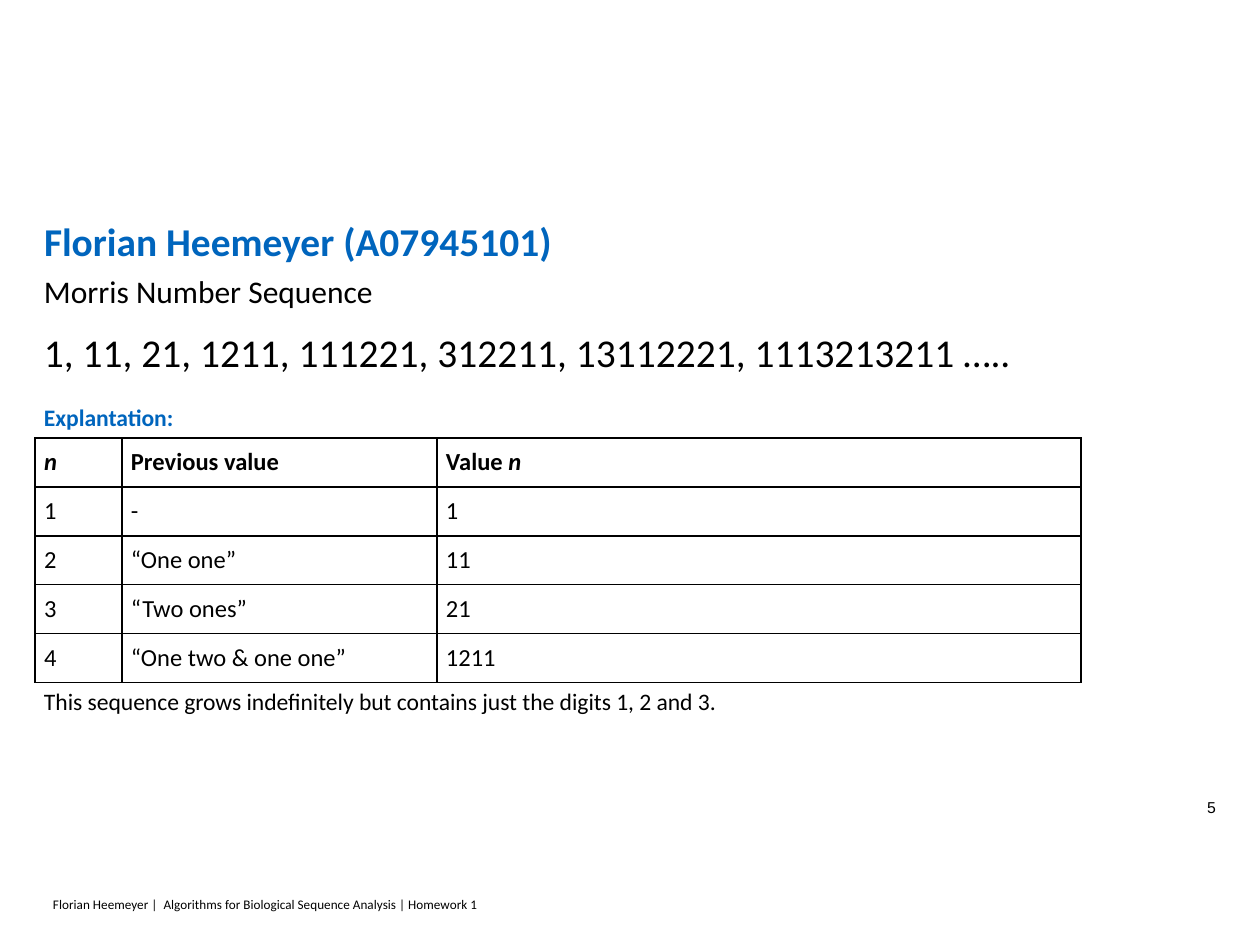
from dataclasses import dataclass

from lxml.etree import SubElement
from pptx import Presentation
from pptx.dml.color import RGBColor
from pptx.enum.text import MSO_ANCHOR, MSO_AUTO_SIZE, PP_ALIGN
from pptx.oxml.ns import qn
from pptx.util import Emu, Pt


@dataclass(frozen=True)
class Theme:
    blue: RGBColor = RGBColor(0x00, 0x65, 0xBD)
    black: RGBColor = RGBColor(0, 0, 0)
    font: str = "Calibri"
    number_font: str = "Arial"
    large: float = 22.5
    subtitle: float = 18
    table: float = 14
    body: float = 13.5
    number: float = 9
    footer: float = 7.5
    border: float = 0.75


theme = Theme()
PX = 914400 / 126
INSET = 9


def px(n):
    return Emu(round(n * PX))


def style(p, size, color=theme.black, bold=False, font=theme.font):
    for r in p.runs:
        r.font.name = font
        r.font.size = Pt(size)
        r.font.color.rgb = color
        r.font.bold = bold


prs = Presentation()
prs.slide_width, prs.slide_height = px(1260), px(945)
s = prs.slides.add_slide(prs.slide_layouts[5])

# Text: shape, box, paragraphs as (text, size, colour, bold, space before)
title = s.shapes.title
subtitle, body, footer, number = (s.shapes.add_textbox(0, 0, 0, 0) for _ in range(4))
blocks = [
    (title, (35, 208, 1182, 55),
     [("Florian Heemeyer (A07945101)", theme.large, theme.blue, True, 0)]),
    (subtitle, (35, 263, 1182, 55),
     [("Morris Number Sequence", theme.subtitle, theme.black, False, 0)]),
    (body, (35, 319, 1182, 437),
     [("1, 11, 21, 1211, 111221, 312211, 13112221, 1113213211 …..",
       theme.large, theme.black, False, 0),
      ("Explantation:", theme.body, theme.blue, True, 16),
      ("This sequence grows indefinitely but contains just the digits 1, 2 and 3.",
       theme.body, theme.black, False, 146)]),
    (footer, (44, 885, 1089, 50),
     [("Florian Heemeyer |  Algorithms for Biological Sequence Analysis | Homework 1",
       theme.footer, theme.black, False, 0)]),
    (number, (935, 788, 281, 38), [("5", theme.number, theme.black, False, 0)]),
]
for sp, box, paragraphs in blocks:
    sp.left, sp.top, sp.width, sp.height = map(px, box)
    tf = sp.text_frame
    tf.word_wrap = True
    tf.auto_size = MSO_AUTO_SIZE.NONE
    tf.vertical_anchor = MSO_ANCHOR.TOP
    tf.margin_left = tf.margin_right = tf.margin_top = tf.margin_bottom = px(INSET)
    tf.text = "\n".join(text for text, *_ in paragraphs)
    for p, (_, size, color, bold, before) in zip(tf.paragraphs, paragraphs):
        p.alignment = PP_ALIGN.LEFT
        p.space_before = Pt(before)
        style(p, size, color, bold)

footer.text_frame.paragraphs[0].line_spacing = 1.15
tf = number.text_frame
tf.vertical_anchor = MSO_ANCHOR.MIDDLE
tf.margin_left = tf.margin_right = 0
tf.margin_top = tf.margin_bottom = px(5)
tf.paragraphs[0].alignment = PP_ALIGN.RIGHT
style(tf.paragraphs[0], theme.number, font=theme.number_font)

# Table
rows = [
    ("n", "Previous value", "Value "),
    ("1", "-", "1"),
    ("2", "“One one”", "11"),
    ("3", "“Two ones”", "21"),
    ("4", "“One two & one one”", "1211"),
]
col_widths = (87, 315, 644)
row_height = 49
table = s.shapes.add_table(len(rows), len(col_widths), px(35), px(438),
                           px(sum(col_widths)), px(row_height * len(rows))).table
table.horz_banding = False
for col, width in zip(table.columns, col_widths):
    col.width = px(width)

for i, row in enumerate(rows):
    table.rows[i].height = px(row_height)
    for j, text in enumerate(row):
        cell = table.cell(i, j)
        cell.margin_left = cell.margin_right = px(INSET)
        cell.margin_top = cell.margin_bottom = px(INSET)
        tcPr = cell._tc.get_or_add_tcPr()
        for side in ("a:lnL", "a:lnR", "a:lnT", "a:lnB"):
            ln = SubElement(tcPr, qn(side), w=str(Pt(theme.border)))
            SubElement(SubElement(ln, qn("a:solidFill")), qn("a:srgbClr"),
                       val=str(theme.black))
        cell.fill.background()
        p = cell.text_frame.paragraphs[0]
        p.text = text
        if (i, j) == (0, 2):
            p.add_run().text = "n"
        style(p, theme.table, bold=i == 0)
        for r in p.runs:
            r.font.italic = r.text == "n"

prs.save("out.pptx")
